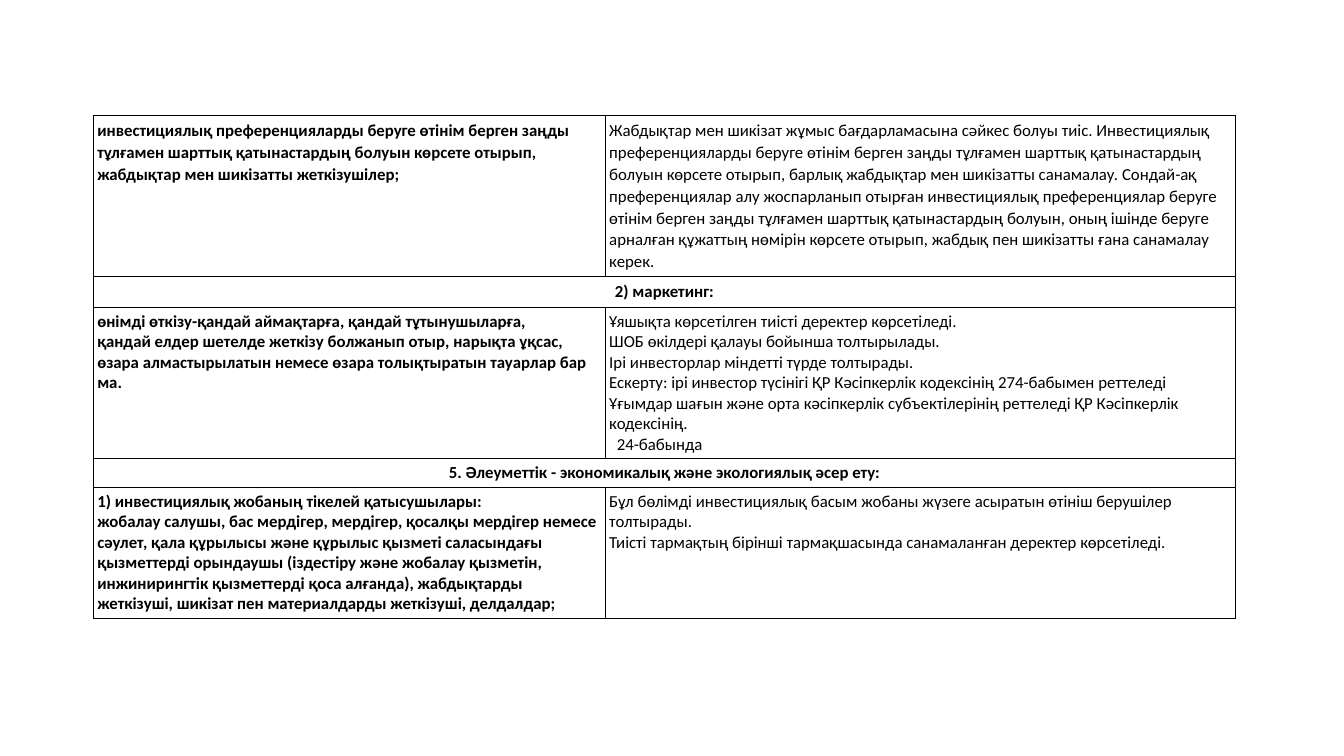
from lxml import etree
from pptx import Presentation
from pptx.dml.color import RGBColor
from pptx.enum import text
from pptx.oxml import ns
from pptx.util import Inches, Pt

BLACK = RGBColor(0x00, 0x00, 0x00)
FONT = "Calibri"
COLUMN_WIDTHS = [10.16, 12.51]
ROW_HEIGHTS = [1.07, 0.61, 0.56, 0.56, 0.56]
SPACED_ROWS = {0, 1}
INDENTED = "24-бабында"

ROWS = [
    [
        ["инвестициялық преференцияларды беруге өтінім берген заңды тұлғамен шарттық "
         "қатынастардың болуын көрсете отырып, жабдықтар мен шикізатты жеткізушілер;"],
        ["Жабдықтар мен шикізат жұмыс бағдарламасына сәйкес болуы тиіс. Инвестициялық "
         "преференцияларды беруге өтінім берген заңды тұлғамен шарттық қатынастардың "
         "болуын көрсете отырып, барлық жабдықтар мен шикізатты санамалау. Сондай-ақ "
         "преференциялар алу жоспарланып отырған инвестициялық преференциялар беруге "
         "өтінім берген заңды тұлғамен шарттық қатынастардың болуын, оның ішінде беруге "
         "арналған құжаттың нөмірін көрсете отырып, жабдық пен шикізатты ғана санамалау "
         "керек."],
    ],
    [["2) маркетинг:"]],
    [
        ["өнімді өткізу-қандай аймақтарға, қандай тұтынушыларға,",
         "қандай елдер шетелде жеткізу болжанып отыр, нарықта ұқсас, өзара "
         "алмастырылатын немесе өзара толықтыратын тауарлар бар ма."],
        ["Ұяшықта көрсетілген тиісті деректер көрсетіледі.",
         "ШОБ өкілдері қалауы бойынша толтырылады.",
         "Ірі инвесторлар міндетті түрде толтырады.",
         "Ескерту: ірі инвестор түсінігі ҚР Кәсіпкерлік кодексінің 274-бабымен реттеледі",
         "Ұғымдар шағын және орта кәсіпкерлік субъектілерінің реттеледі ҚР Кәсіпкерлік "
         "кодексінің.",
         INDENTED],
    ],
    [["5. Әлеуметтік - экономикалық және экологиялық әсер ету:"]],
    [
        ["1) инвестициялық жобаның тікелей қатысушылары:",
         "жобалау салушы, бас мердігер, мердігер, қосалқы мердігер немесе сәулет, қала "
         "құрылысы және құрылыс қызметі саласындағы қызметтерді орындаушы (іздестіру "
         "және жобалау қызметін, инжинирингтік қызметтерді қоса алғанда), жабдықтарды "
         "жеткізуші, шикізат пен материалдарды жеткізуші, делдалдар;"],
        ["Бұл бөлімді инвестициялық басым жобаны жүзеге асыратын өтініш берушілер "
         "толтырады.",
         "Тиісті тармақтың бірінші тармақшасында санамаланған деректер көрсетіледі."],
    ],
]


def style_cell(cell):
    cell.margin_left = cell.margin_right = Inches(0.08)
    cell.margin_top = cell.margin_bottom = Inches(0.08)
    properties = cell._tc.get_or_add_tcPr()
    for side in ("lnL", "lnR", "lnT", "lnB"):
        line = etree.SubElement(properties, ns.qn(f"a:{side}"), w=str(Pt(1)))
        fill = etree.SubElement(line, ns.qn("a:solidFill"))
        etree.SubElement(fill, ns.qn("a:srgbClr"), val=str(BLACK))
    cell.fill.background()


def write_cell(cell, paragraphs, bold, centred, spaced):
    frame = cell.text_frame
    frame.text = "\n".join(paragraphs)
    for para in frame.paragraphs:
        para.font.name = FONT
        para.font.size = Pt(24)
        para.font.bold = bold
        para.font.color.rgb = BLACK
        para.alignment = text.PP_ALIGN.CENTER if centred else text.PP_ALIGN.LEFT
        if spaced:
            para.line_spacing = 1.07
            para.space_after = Pt(12)
        if para.text == INDENTED:
            para._p.get_or_add_pPr().set("marL", str(Inches(0.15)))


def add_requirements(page, left, top, width, height):
    frame = page.shapes.add_table(len(ROWS), len(COLUMN_WIDTHS), Inches(left),
                                  Inches(top), Inches(width), Inches(height))
    table = frame.table
    table.first_row = table.horz_banding = False
    for column, column_width in zip(table.columns, COLUMN_WIDTHS):
        column.width = Inches(column_width)
    for row, row_height in zip(table.rows, ROW_HEIGHTS):
        row.height = Inches(row_height)
    frame.height = Inches(height)
    for cell in table.iter_cells():
        style_cell(cell)
    for index, contents in enumerate(ROWS):
        heading = len(contents) == 1
        if heading:
            table.cell(index, 0).merge(table.cell(index, 1))
        for column, paragraphs in enumerate(contents):
            write_cell(table.cell(index, column), paragraphs, column == 0,
                       heading, index in SPACED_ROWS)


def main():
    deck = Presentation()
    deck.slide_width = Inches(26.67)
    deck.slide_height = Inches(15)
    page = deck.slides.add_slide(deck.slide_layouts[6])
    add_requirements(page, 1.85, 2.28, 22.67, 9.86)
    deck.save("out.pptx")


if __name__ == "__main__":
    main()
